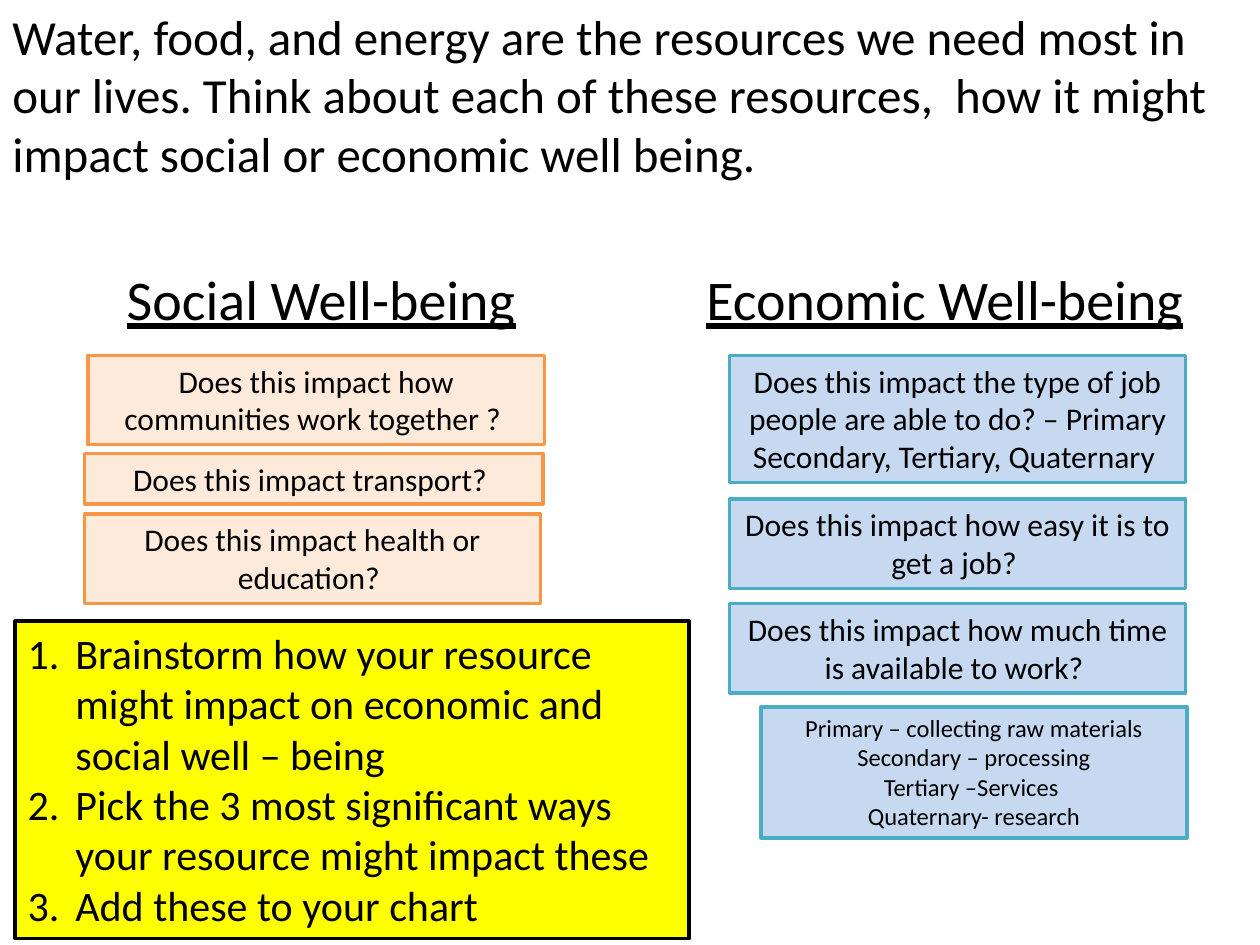
"""Build the slide on how resources affect social and economic well-being."""
import pptx
import pptx.dml.color
import pptx.enum.shapes
import pptx.enum.text
import pptx.oxml
import pptx.util

Inches = pptx.util.Inches
Align = pptx.enum.text.PP_ALIGN


def color(code):
    """Turn a hex string into a colour."""
    return pptx.dml.color.RGBColor.from_string(code)


def write(shape, lines, size, align, under=False, number=False):
    """Fill a shape with styled lines of text."""
    frame = shape.text_frame
    frame.word_wrap = True
    frame.vertical_anchor = pptx.enum.text.MSO_ANCHOR.TOP
    frame.text = "\n".join(lines)
    for para in frame.paragraphs:
        if number:
            props = para._p.get_or_add_pPr()
            props.set("marL", str(Inches(0.38)))
            props.set("indent", str(-Inches(0.38)))
            mark = pptx.oxml.ns.qn("a:buAutoNum")
            props.append(props.makeelement(mark, {"type": "arabicPeriod"}))
        para.alignment = align
        font = para.font
        font.name = "Calibri"
        font.size = pptx.util.Pt(size)
        font.color.rgb = color("000000")
        if under:
            font.underline = True


deck = pptx.Presentation()
deck.slide_width, deck.slide_height = Inches(10), Inches(7.5)
slide = deck.slides.add_slide(deck.slide_layouts[6])

intro = ("Water, food, and energy are the resources we need most in our lives. "
         "Think about each of these resources,  how it might impact social or "
         "economic well being.")
heads = [
    (0, 0, 10, 1.5, [intro], 28, Align.LEFT, False),
    (0.55, 2.05, 4, 0.64, ["Social Well-being"], 32, Align.CENTER, True),
    (5.25, 2.05, 4.5, 0.64, ["Economic Well-being"], 32, Align.CENTER, True),
]
for left, top, width, height, lines, size, align, under in heads:
    box = slide.shapes.add_textbox(
        Inches(left), Inches(top), Inches(width), Inches(height))
    write(box, lines, size, align, under)

orange = ("FDEADA", "F79646")
blue = ("C6D9F1", "4BACC6")
yellow = ("FFFF00", "000000")
cards = [
    (0.7, 2.82, 3.62, 0.71, orange, 18,
     ["Does this impact how communities work together ? "]),
    (0.67, 3.6, 3.64, 0.4, orange, 18, ["Does this impact transport? "]),
    (0.67, 4.08, 3.62, 0.71, orange, 18,
     ["Does this impact health or education? "]),
    (5.79, 2.82, 3.62, 1.01, blue, 18,
     ["Does this impact the type of job people are able to do? – Primary "
      "Secondary, Tertiary, Quaternary "]),
    (5.79, 3.96, 3.62, 0.71, blue, 18,
     ["Does this impact how easy it is to get a job? "]),
    (5.79, 4.79, 3.62, 0.71, blue, 18,
     ["Does this impact how much time is available to work? "]),
    (6.04, 5.61, 3.38, 1.04, blue, 14,
     ["Primary – collecting raw materials", "Secondary – processing",
      "Tertiary –Services ", "Quaternary- research"]),
    (0.12, 4.93, 5.35, 2.52, yellow, 24,
     ["Brainstorm how your resource might impact on economic and "
      "social well – being",
      "Pick the 3 most significant ways your resource might impact these",
      "Add these to your chart"]),
]
for left, top, width, height, (fill, line), size, lines in cards:
    card = slide.shapes.add_shape(
        pptx.enum.shapes.MSO_SHAPE.RECTANGLE,
        Inches(left), Inches(top), Inches(width), Inches(height))
    card.shadow.inherit = False
    card.fill.solid()
    card.fill.fore_color.rgb = color(fill)
    card.line.color.rgb = color(line)
    card.line.width = pptx.util.Pt(2)
    tasks = fill == yellow[0]
    write(card, lines, size, Align.LEFT if tasks else Align.CENTER,
          number=tasks)
    card.text_frame.auto_size = pptx.enum.text.MSO_AUTO_SIZE.SHAPE_TO_FIT_TEXT

deck.save("out.pptx")
